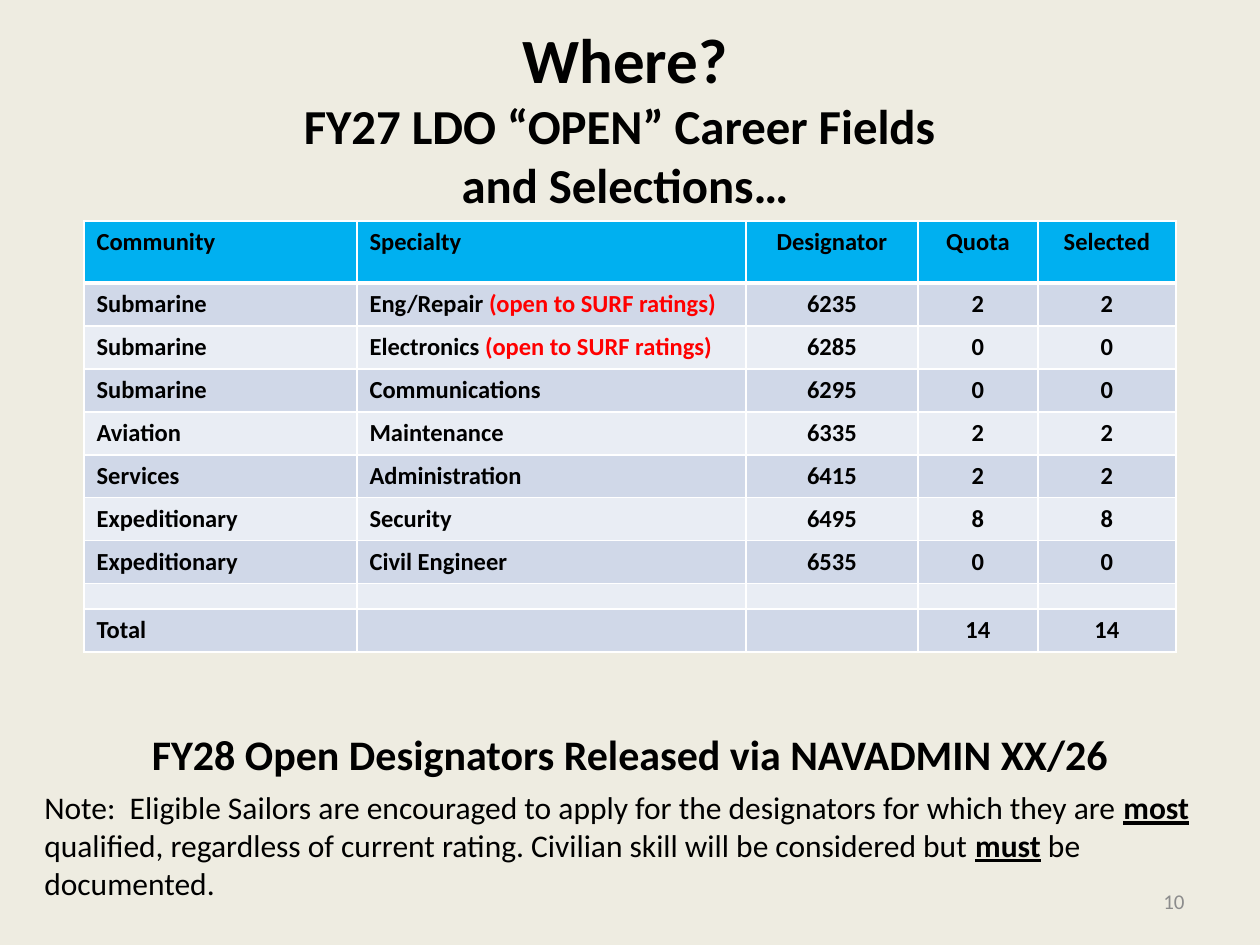
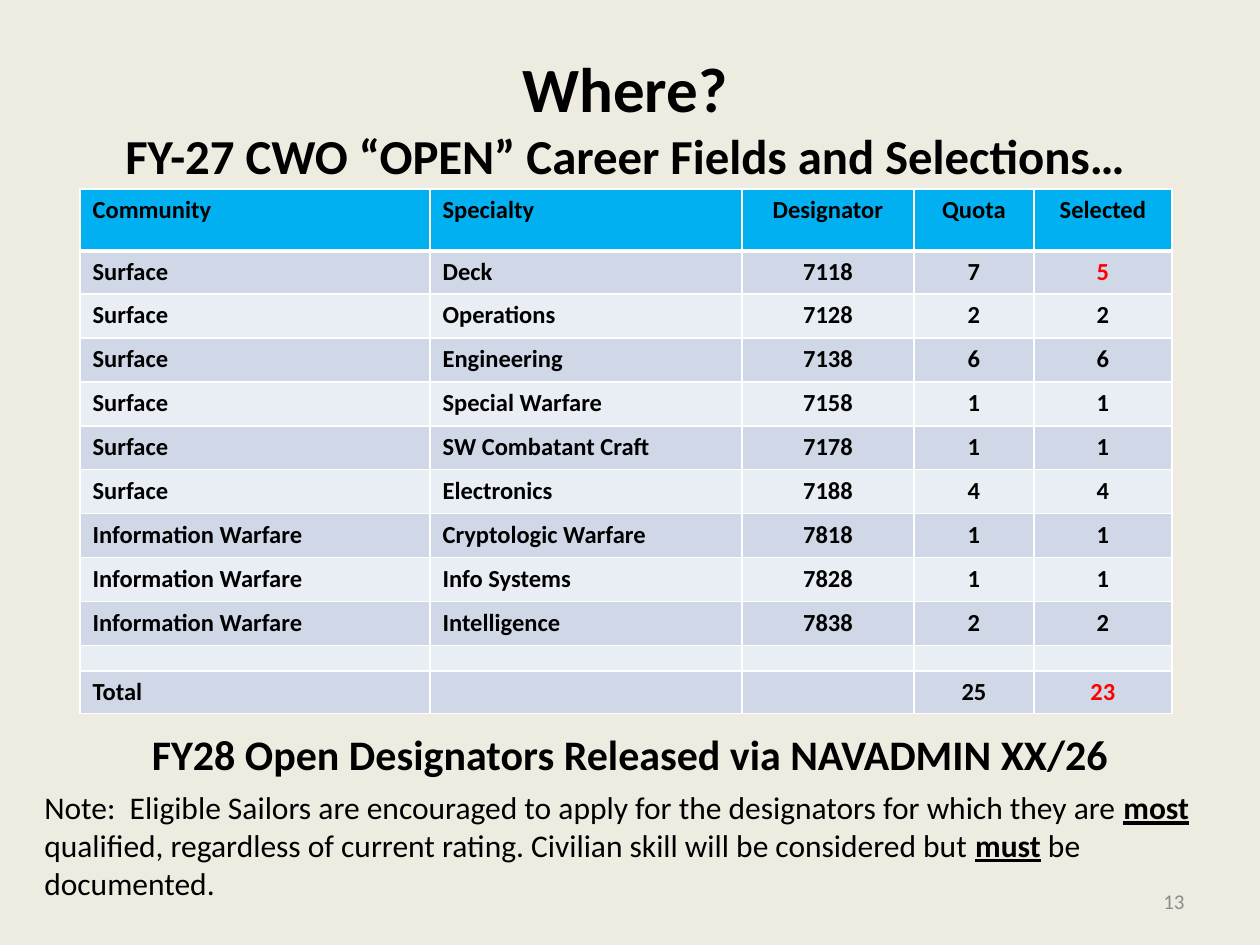
from copy import deepcopy

from lxml.etree import SubElement
from pptx import Presentation
from pptx.dml.color import RGBColor
from pptx.enum.text import MSO_ANCHOR, MSO_AUTO_SIZE, PP_ALIGN
from pptx.oxml import parse_xml
from pptx.oxml.ns import nsdecls, qn
from pptx.util import Emu, Pt

# Content: a text is a string or a list of (words, style) runs
HEADERS = ["Community", "Specialty", "Designator", "Quota", "Selected"]
OPEN_TO_SURF = ("(open to SURF ratings)", "red")
RELEASE = "FY28 Open Designators Released via NAVADMIN XX/26"
NOTE = [
    ("Note:  Eligible Sailors are encouraged to apply for the designators "
     "for which they are ", "note"),
    ("most", "stress"),
    (" qualified, regardless of current rating. Civilian skill will be "
     "considered but ", "note"),
    ("must", "stress"),
    (" be documented.", "note"),
]
SLIDES = [
    {
        "number": "10",
        "title": ["FY27 LDO “OPEN” Career Fields ", "and Selections…"],
        "at": (84, 221),
        "name_cols": [273, 389],
        "row": 43,
        "rows": [
            ["Submarine", [("Eng/Repair ", "cell"), OPEN_TO_SURF], "6235", "2", "2"],
            ["Submarine", [("Electronics ", "cell"), OPEN_TO_SURF], "6285", "0", "0"],
            ["Submarine", "Communications", "6295", "0", "0"],
            ["Aviation", "Maintenance", "6335", "2", "2"],
            ["Services", "Administration", "6415", "2", "2"],
            ["Expeditionary", "Security", "6495", "8", "8"],
            ["Expeditionary", "Civil Engineer", "6535", "0", "0"],
        ],
        "total": ["Total", "", "", "14", "14"],
    },
    {
        "number": "13",
        "title": ["FY-27 CWO “OPEN” Career Fields and Selections…"],
        "at": (80, 189),
        "name_cols": [350, 312],
        "row": 44,
        "rows": [
            ["Surface", "Deck", "7118", "7", [("5", "red")]],
            ["Surface", "Operations", "7128", "2", "2"],
            ["Surface", "Engineering", "7138", "6", "6"],
            ["Surface", "Special Warfare", "7158", "1", "1"],
            ["Surface", "SW Combatant Craft", "7178", "1", "1"],
            ["Surface", "Electronics", "7188", "4", "4"],
            ["Information Warfare", "Cryptologic Warfare", "7818", "1", "1"],
            ["Information Warfare", "Info Systems", "7828", "1", "1"],
            ["Information Warfare", "Intelligence", "7838", "2", "2"],
        ],
        "total": ["Total", "", "", "25", [("23", "red")]],
    },
]

# Theme
BLACK, RED, GREY = "000000", "FF0000", "8C8C8C"
THEME = {
    "background": "EEECE1", "header": "00B0F0", "border": "FFFFFF",
    "bands": ["D0D8E8", "E9EDF4"],
    "styles": {
        "title": {"size": 36, "color": BLACK, "bold": True},
        "subtitle": {"size": 27.9, "color": BLACK, "bold": True},
        "release": {"size": 24, "color": BLACK, "bold": True},
        "note": {"size": 18, "color": BLACK, "bold": False},
        "stress": {"size": 18, "color": BLACK, "bold": True, "underline": True},
        "cell": {"size": 14, "color": BLACK, "bold": True},
        "red": {"size": 14, "color": RED, "bold": True},
        "number": {"size": 12, "color": GREY, "bold": False},
    },
    "font": "Calibri", "spacer_size": 6,
}

# Layout, in px
SLIDE = (1260, 945)
TITLE_BOX = (42, 38, 1166, 158)
RELEASE_BOX = (84, 722, 1092, 63)
NOTE_BOX = (32, 782, 1207, 127)
NUMBER_BOX = (903, 876, 294, 50)
VALUE_COLS = [172, 120, 138]
HEADER_H, TEXT_ROW_H, SPACER_H = 62, 43, 25


def px(n):
    return Emu(round(n * 914400 / 126))


def place(sp, box):
    for name, n in zip(("left", "top", "width", "height"), box):
        setattr(sp, name, px(n))


def add_run(p, text, style):
    r = p.add_run()
    r.text = text
    fmt = dict(THEME["styles"][style], name=THEME["font"])
    r.font.color.rgb = RGBColor.from_string(fmt.pop("color"))
    fmt["size"] = Pt(fmt["size"])
    for name, value in fmt.items():
        setattr(r.font, name, value)
    return r


def write(p, text, style, align):
    p.alignment = align
    for words, run_style in [(text, style)] if isinstance(text, str) else text:
        add_run(p, words, run_style)


def add_text(s, box, text, style, align=PP_ALIGN.LEFT, anchor=MSO_ANCHOR.TOP):
    tf = s.shapes.add_textbox(*map(px, box)).text_frame
    tf.word_wrap = True
    tf.vertical_anchor = anchor
    write(tf.paragraphs[0], text, style, align)


def add_title(s, lines):
    sp = s.shapes.title
    place(sp, TITLE_BOX)
    tf = sp.text_frame
    tf.auto_size = MSO_AUTO_SIZE.NONE
    tf.vertical_anchor = MSO_ANCHOR.MIDDLE
    p = tf.paragraphs[0]
    p.alignment = PP_ALIGN.CENTER
    r = add_run(p, "Where?", "title")
    for line in lines:
        # Each break takes the size of the line it ends
        p.add_line_break()
        p._p[-1].append(deepcopy(r._r.get_or_add_rPr()))
        r = add_run(p, line, "subtitle")


def add_borders(cell, row):
    widths = {"L": 1, "R": 1, "T": 3 if row == 1 else 1, "B": 3 if row == 0 else 1}
    tc_pr = cell._tc.get_or_add_tcPr()
    for i, (side, width) in enumerate(widths.items()):
        ln = parse_xml(f'<a:ln{side} {nsdecls("a")} w="{Pt(width)}"/>')
        fill = SubElement(ln, qn("a:solidFill"))
        SubElement(fill, qn("a:srgbClr"), val=THEME["border"])
        tc_pr.insert(i, ln)


def add_quota_table(s, data):
    spacer = [""] * len(HEADERS)
    rows = [HEADERS, *data["rows"], spacer, data["total"]]
    widths = data["name_cols"] + VALUE_COLS
    heights = [HEADER_H, TEXT_ROW_H] + [data["row"]] * (len(data["rows"]) - 1)
    heights += [SPACER_H, TEXT_ROW_H]
    box = (*data["at"], sum(widths), sum(heights))
    table = s.shapes.add_table(len(rows), len(widths), *map(px, box)).table
    table.first_row = table.horz_banding = False
    for col, width in zip(table.columns, widths):
        col.width = px(width)

    for i, (texts, height) in enumerate(zip(rows, heights)):
        table.rows[i].height = px(height)
        color = THEME["bands"][(i - 1) % 2] if i else THEME["header"]
        for j, text in enumerate(texts):
            cell = table.cell(i, j)
            cell.fill.solid()
            cell.fill.fore_color.rgb = RGBColor.from_string(color)
            add_borders(cell, i)
            p = cell.text_frame.paragraphs[0]
            if text:
                write(p, text, "cell", PP_ALIGN.LEFT if j < 2 else PP_ALIGN.CENTER)
            else:
                # The size of an empty cell sets the least row height
                size = (THEME["spacer_size"] if texts is spacer
                        else THEME["styles"]["cell"]["size"])
                p._p.get_or_add_endParaRPr().set("sz", str(size * 100))


def main():
    prs = Presentation()
    prs.slide_width, prs.slide_height = map(px, SLIDE)
    fill = prs.slide_master.background.fill
    fill.solid()
    fill.fore_color.rgb = RGBColor.from_string(THEME["background"])

    for data in SLIDES:
        s = prs.slides.add_slide(prs.slide_layouts[5])
        add_title(s, data["title"])
        add_text(s, RELEASE_BOX, RELEASE, "release", PP_ALIGN.CENTER)
        add_text(s, NOTE_BOX, NOTE, "note")
        add_quota_table(s, data)
        add_text(s, NUMBER_BOX, data["number"], "number", PP_ALIGN.RIGHT,
                 MSO_ANCHOR.MIDDLE)
    prs.save("out.pptx")


if __name__ == "__main__":
    main()
